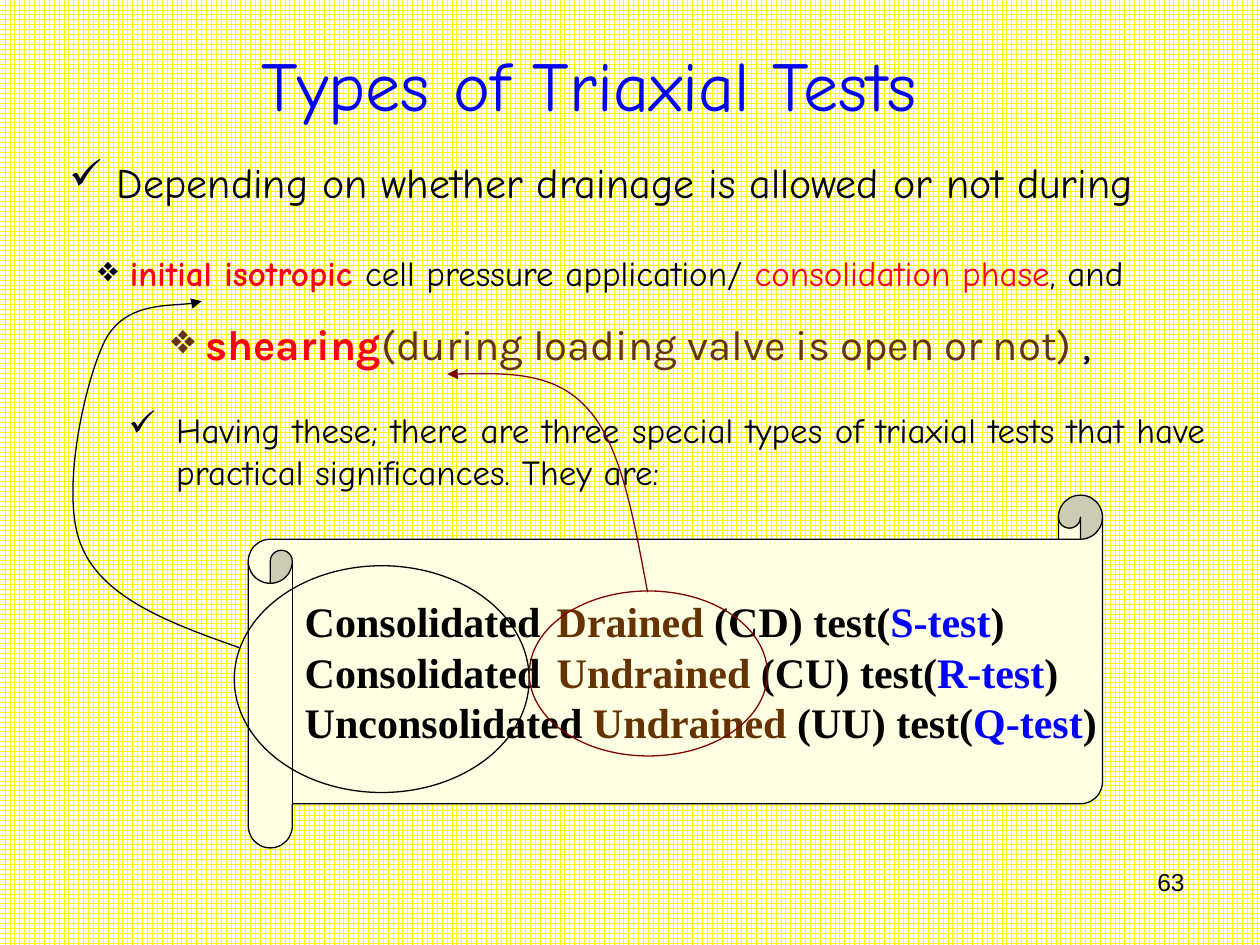
from lxml.etree import SubElement
from pptx import Presentation
from pptx.dml.color import RGBColor
from pptx.enum.dml import MSO_PATTERN
from pptx.enum.shapes import MSO_SHAPE
from pptx.enum.text import MSO_ANCHOR, PP_ALIGN
from pptx.oxml.ns import qn
from pptx.util import Pt

EMU_PER_PX = 9144

BLACK = RGBColor(0x00, 0x00, 0x00)
WHITE = RGBColor(0xFF, 0xFF, 0xFF)
YELLOW = RGBColor(0xFF, 0xFF, 0x00)
BLUE = RGBColor(0x00, 0x00, 0xFF)
RED = RGBColor(0xFF, 0x00, 0x00)
BROWN = RGBColor(0x66, 0x33, 0x00)
MAROON = RGBColor(0x80, 0x00, 0x00)
CREAM = RGBColor(0xFF, 0xFF, 0xE3)

TEST_TYPES = [
    ("Consolidated\t", "Drained", "CD", "S-test"),
    ("Consolidated \t", "Undrained", "CU", "R-test"),
    ("Unconsolidated ", "Undrained", "UU", "Q-test"),
]


def px(*lengths):
    return [length * EMU_PER_PX for length in lengths]


def paint_background(slide):
    fill = slide.background.fill
    fill.patterned()
    fill.pattern = MSO_PATTERN.LARGE_GRID
    fill.fore_color.rgb = YELLOW
    fill.back_color.rgb = WHITE


def write_runs(paragraph, runs, size, font, align=PP_ALIGN.LEFT):
    paragraph.alignment = align
    paragraph.font.size = Pt(size)
    paragraph.font.name = font
    for words, color, bold in runs:
        run = paragraph.add_run()
        run.text = words
        run.font.color.rgb = color
        run.font.bold = bold


def add_bullet(paragraph, mark, indent):
    properties = paragraph._p.get_or_add_pPr()
    hanging = indent * EMU_PER_PX
    properties.set("marL", str(hanging))
    properties.set("indent", str(-hanging))
    bullet = properties.makeelement(qn("a:buChar"), {"char": mark})
    properties.insert(0, bullet)


def add_text(slide, box, runs, size, font, align=PP_ALIGN.LEFT,
             anchor=MSO_ANCHOR.TOP, mark=None, indent=0):
    frame = slide.shapes.add_textbox(*px(*box)).text_frame
    frame.word_wrap = True
    frame.vertical_anchor = anchor
    paragraph = frame.paragraphs[0]
    write_runs(paragraph, runs, size, font, align)
    if mark:
        add_bullet(paragraph, mark, indent)


def outline(shape, color):
    shape.shadow.inherit = False
    shape.line.color.rgb = color
    shape.line.width = Pt(0.75)


def add_scroll(slide, box):
    scroll = slide.shapes.add_shape(MSO_SHAPE.HORIZONTAL_SCROLL, *px(*box))
    scroll.adjustments[0] = 0.125
    scroll.fill.solid()
    scroll.fill.fore_color.rgb = CREAM
    outline(scroll, BLACK)
    frame = scroll.text_frame
    frame.word_wrap = False
    frame.vertical_anchor = MSO_ANCHOR.MIDDLE
    for row, (consolidation, drainage, code, letter) in enumerate(TEST_TYPES):
        paragraph = frame.add_paragraph() if row else frame.paragraphs[0]
        paragraph.font.bold = True
        write_runs(paragraph, [
            (consolidation, BLACK, True),
            (drainage, BROWN, True),
            (f" ({code}) test(", BLACK, True),
            (letter, BLUE, True),
            (")", BLACK, True),
        ], 24, "Times New Roman")


def bend_lines(curve):
    path_element = next(curve._element.iter(qn("a:path")))
    lines = path_element.findall(qn("a:lnTo"))
    for start in range(0, len(lines), 3):
        bezier = SubElement(path_element, qn("a:cubicBezTo"))
        for line in lines[start:start + 3]:
            bezier.append(line[0])
            path_element.remove(line)


def add_callout(slide, ellipse_box, curve_points, color):
    group = slide.shapes.add_group_shape()
    ellipse = group.shapes.add_shape(MSO_SHAPE.OVAL, *px(*ellipse_box))
    start, *others = [px(*point) for point in curve_points]
    builder = group.shapes.build_freeform(*start)
    builder.add_line_segments(others, close=False)
    curve = builder.convert_to_shape()
    bend_lines(curve)
    for shape in (ellipse, curve):
        shape.fill.background()
        outline(shape, color)
    SubElement(curve.line._get_or_add_ln(), qn("a:tailEnd"), type="triangle")


def main():
    presentation = Presentation()
    presentation.slide_width, presentation.slide_height = px(1000, 750)
    slide = presentation.slides.add_slide(presentation.slide_layouts[6])
    paint_background(slide)

    add_text(slide, (59, 25, 817, 83), [("Types of Triaxial Tests", BLUE, None)],
             40, "Comic Neue", PP_ALIGN.CENTER, MSO_ANCHOR.MIDDLE)
    add_text(slide, (717, 683, 233, 52), [("63", BLACK, None)],
             14, "Arial", PP_ALIGN.RIGHT)
    add_text(slide, (45, 119, 922, 50), [
        ("Depending on whether drainage is allowed or not during", BLACK, None),
    ], 24, "Comic Neue", mark="✓", indent=38)
    add_text(slide, (68, 195, 924, 44), [
        (" ", BLACK, None),
        ("initial isotropic ", RED, True),
        ("cell pressure application/ ", BLACK, None),
        ("consolidation phase", RED, None),
        (", and", BLACK, None),
    ], 20, "Comic Neue", mark="❖")
    add_text(slide, (126, 248, 776, 50), [
        (" ", BROWN, None),
        ("shearing", RED, True),
        ("(during loading valve is open or not) ", BROWN, None),
        (",", BLACK, None),
    ], 24, "Karla", mark="❖")
    add_text(slide, (92, 319, 875, 77), [
        ("Having these; there are three special types of triaxial tests that "
         "have practical significances. They are:", BLACK, None),
    ], 20, "Comic Neue", PP_ALIGN.JUSTIFY, mark="✓", indent=38)

    add_scroll(slide, (197, 393, 678, 280))
    add_callout(slide, (186, 449, 234, 180), [
        (190, 514), (136, 495), (82, 475), (65, 434), (47, 394),
        (67, 304), (83, 271), (99, 239), (148, 244), (160, 239),
    ], BLACK)
    add_callout(slide, (420, 469, 189, 131), [
        (514, 470), (503, 412), (493, 353), (466, 324),
        (440, 295), (398, 296), (355, 297),
    ], MAROON)
    presentation.save("out.pptx")


if __name__ == "__main__":
    main()
